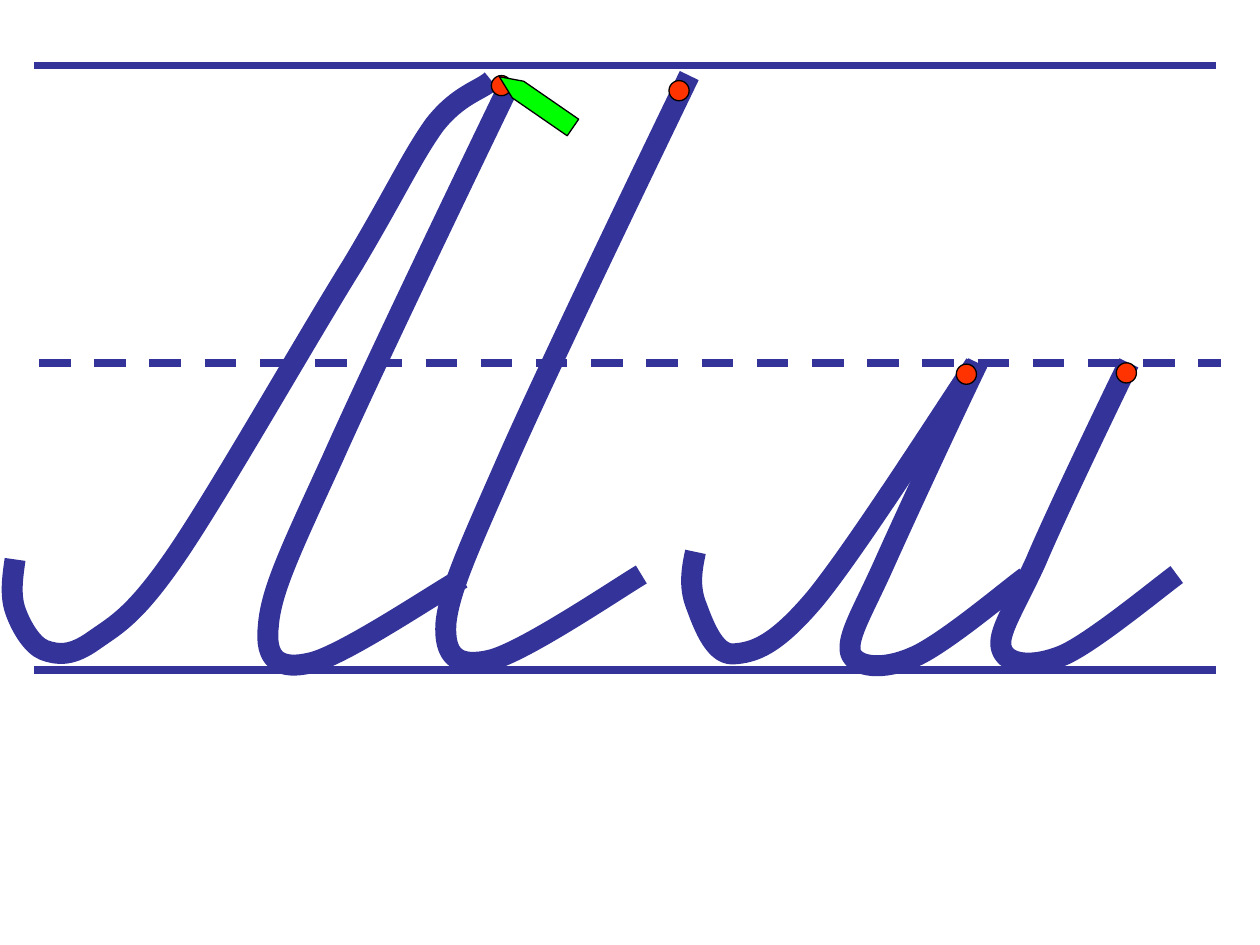
from lxml import etree
from pptx import Presentation
from pptx.dml.color import RGBColor
from pptx.enum import dml, shapes
from pptx.oxml.ns import qn

PX = 9144
THEME = {
    "ink": RGBColor.from_string("333399"),
    "dot": RGBColor.from_string("FF3300"),
    "pen": RGBColor.from_string("00FF00"),
    "edge": RGBColor.from_string("000000"),
    "stroke": 12 * 12700,
    "rule": 57150,
    "thin": 9525,
}


def stroke(host, points):
    build = host.build_freeform(*points[0], scale=PX)
    build.add_line_segments(points[1:], close=False)
    form = build.convert_to_shape()
    track = form.element.find(".//" + qn("a:path"))
    steps = track.findall(qn("a:lnTo"))
    for i in range(0, len(steps), 3):
        curve = etree.SubElement(track, qn("a:cubicBezTo"))
        for step in steps[i:i + 3]:
            curve.append(step[0])
            track.remove(step)
    form.shadow.inherit = False
    form.fill.background()
    form.line.color.rgb = THEME["ink"]
    form.line.width = THEME["stroke"]


def solid(host, kind, box, fill):
    form = host.add_shape(kind, *(n * PX for n in box))
    form.shadow.inherit = False
    form.fill.solid()
    form.fill.fore_color.rgb = THEME[fill]
    form.line.color.rgb = THEME["edge"]
    form.line.width = THEME["thin"]
    return form


deck = Presentation()
deck.slide_width = 1000 * PX
deck.slide_height = 750 * PX
page = deck.slides.add_slide(deck.slide_layouts[6]).shapes
DOT = shapes.MSO_SHAPE.FLOWCHART_CONNECTOR

stroke(page, [
    (509, 456), (489, 468), (415, 518), (389, 524),
    (363, 530), (352, 521), (354, 494),
    (357, 467), (373, 433), (405, 360),
    (437, 288), (517, 122), (547, 60)])

rules = page.add_group_shape().shapes
for left, top, dash in [(27, 52, None), (31, 288, dml.MSO_LINE.DASH), (27, 532, None)]:
    rule = rules.add_connector(
        shapes.MSO_CONNECTOR.STRAIGHT,
        left * PX, top * PX, (left + 938) * PX, top * PX)
    rule.line.color.rgb = THEME["ink"]
    rule.line.width = THEME["rule"]
    if dash:
        rule.line.dash_style = dash
    etree.SubElement(rule.element.spPr, qn("a:effectLst"))

solid(page, DOT, (531, 64, 16, 16), "dot")
stroke(page, [
    (12, 444), (10, 458), (8, 472), (12, 484),
    (16, 496), (25, 512), (35, 516),
    (46, 520), (57, 521), (75, 508),
    (92, 496), (107, 489), (141, 439),
    (175, 389), (245, 266), (280, 210),
    (314, 153), (327, 124), (345, 99),
    (364, 75), (381, 72), (390, 64)])
stroke(page, [
    (367, 459), (347, 470), (273, 520), (247, 526),
    (222, 532), (210, 524), (213, 497),
    (215, 469), (231, 436), (264, 364),
    (296, 292), (376, 126), (406, 64)])
solid(page, DOT, (390, 60, 16, 16), "dot")

small = page.add_group_shape().shapes
stroke(small, [
    (814, 458), (799, 469), (747, 513), (724, 522),
    (701, 532), (679, 530), (675, 518),
    (672, 505), (685, 485), (702, 447),
    (719, 409), (760, 321), (776, 288)])
stroke(small, [
    (934, 456), (919, 467), (867, 510), (844, 520),
    (820, 530), (799, 528), (795, 515),
    (791, 503), (805, 483), (822, 446),
    (838, 408), (880, 321), (896, 288)])
stroke(small, [
    (552, 438), (549, 452), (547, 465), (552, 479),
    (557, 492), (566, 520), (582, 519),
    (598, 518), (615, 513), (647, 475),
    (679, 436), (748, 328), (774, 289)])
for left, top in [(759, 289), (886, 288)]:
    solid(small, DOT, (left, top, 16, 16), "dot")

pen = solid(page, shapes.MSO_SHAPE.PENTAGON, (390, 73, 71, 16), "pen")
pen.adjustments[0] = 1.124
pen.rotation = 214.6

deck.save("out.pptx")
